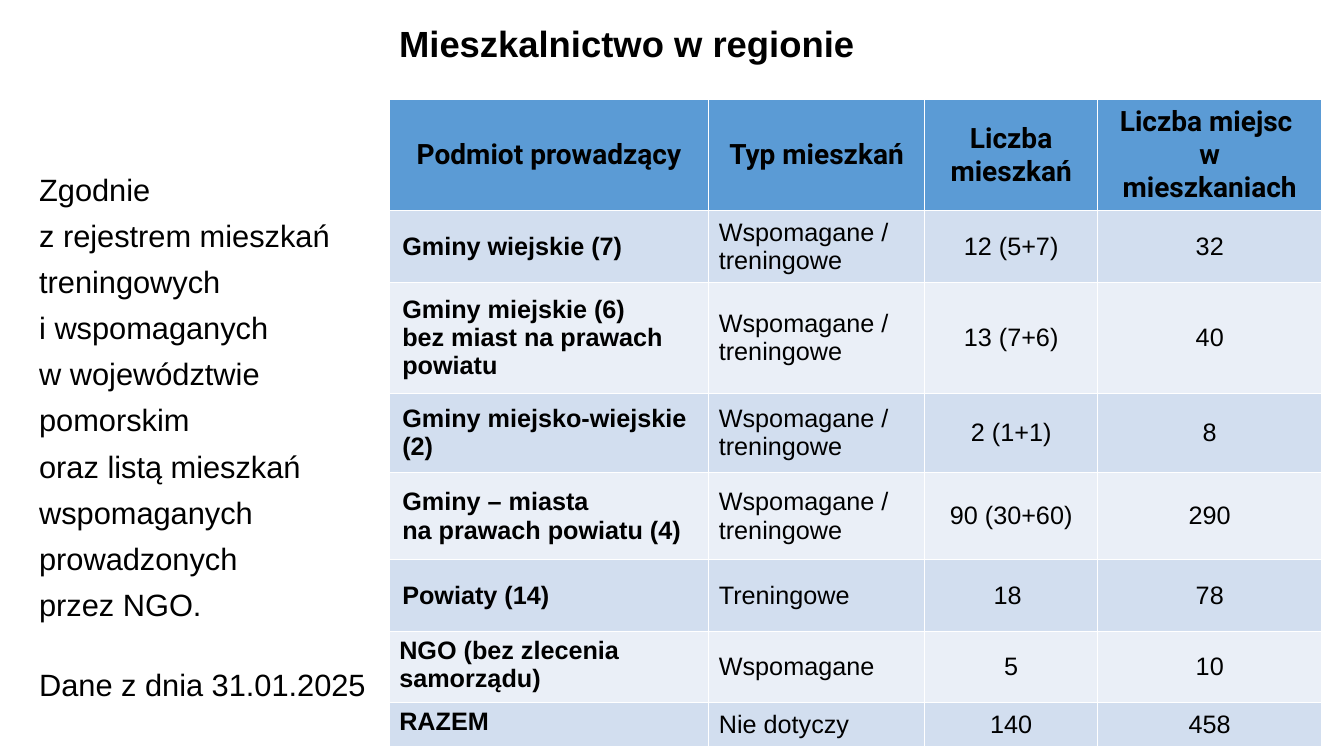
"""Build the slide on supported housing in the region."""
from dataclasses import dataclass

from pptx import Presentation
from pptx import util as u
from pptx.dml.color import RGBColor
from pptx.enum import text

WIDTH, HEIGHT = u.Inches(13.33), u.Inches(7.5)


@dataclass(frozen=True)
class Theme:
    """Colours, fonts and type sizes of the slide."""
    ink: str = "000000"
    header: str = "5B9BD5"
    bands: tuple = ("D2DEEF", "EAEFF7")
    font: str = "Arial"
    header_font: str = "Roboto"
    title_size: int = 26
    body_size: int = 22
    header_size: int = 20
    cell_size: int = 18


THEME = Theme()
COLUMN_SHARES = (23.78, 16.05, 12.9, 16.65)
ROW_SHARES = (12.53, 9.47, 14.67, 10.53, 11.47, 9.47, 9.47, 5.87)
PADDED_ROWS = 6
INTRO = ("Zgodnie \vz rejestrem mieszkań treningowych \vi wspomaganych "
         "\vw województwie pomorskim \voraz listą mieszkań wspomaganych "
         "prowadzonych \vprzez NGO.\nDane z dnia 31.01.2025")
BOTH = "Wspomagane / treningowe"
HOUSING = (
    ("Podmiot prowadzący", "Typ mieszkań", "Liczba mieszkań",
     "Liczba miejsc \vw mieszkaniach"),
    ("Gminy wiejskie (7)", BOTH, "12 (5+7)", "32"),
    ("Gminy miejskie (6)\nbez miast na prawach powiatu", BOTH, "13 (7+6)", "40"),
    ("Gminy miejsko-wiejskie (2)", BOTH, "2 (1+1)", "8"),
    ("Gminy – miasta \vna prawach powiatu (4)", BOTH, "90 (30+60)", "290"),
    ("Powiaty (14)", "Treningowe", "18 ", "78"),
    ("NGO (bez zlecenia samorządu)", "Wspomagane", "5", "10"),
    ("RAZEM", "Nie dotyczy", "140", "458"),
)


def across(share):
    """Return a percentage of the slide's width."""
    return round(WIDTH * share / 100)


def down(share):
    """Return a percentage of the slide's height."""
    return round(HEIGHT * share / 100)


def write(frame, wording, size, font=THEME.font, bold=False, align=None):
    """Fill a text frame and format all its runs alike."""
    frame.text = wording
    for para in frame.paragraphs:
        para.alignment = align
        for span in para.runs:
            span.font.name = font
            span.font.size = u.Pt(size)
            span.font.bold = bold
            span.font.color.rgb = RGBColor.from_string(THEME.ink)


def add_text(page, left, top, width, height, wording, size, spacing,
             bold=False, anchor=text.MSO_ANCHOR.TOP):
    """Add a wrapping text box placed by shares of the slide."""
    box = page.shapes.add_textbox(across(left), down(top), across(width), down(height))
    frame = box.text_frame
    frame.word_wrap = True
    frame.vertical_anchor = anchor
    write(frame, wording, size, bold=bold)
    for para in frame.paragraphs:
        para.line_spacing = spacing
    return frame


def style_cell(cell, wording, row, column):
    """Write one cell in the manner of its row and column."""
    is_header, is_name = row == 0, column == 0
    centred = is_header or column > 1
    write(cell.text_frame, wording,
          THEME.header_size if is_header else THEME.cell_size,
          THEME.header_font if is_header else THEME.font,
          bold=is_header or is_name,
          align=text.PP_ALIGN.CENTER if centred else text.PP_ALIGN.LEFT)
    padded = row < PADDED_ROWS
    if is_header or (is_name and padded):
        cell.margin_left = cell.margin_right = u.Inches(0.13)
    cell.vertical_anchor = (text.MSO_ANCHOR.MIDDLE if padded or not is_name
                            else text.MSO_ANCHOR.TOP)
    cell.fill.solid()
    colour = THEME.header if is_header else THEME.bands[(row - 1) % 2]
    cell.fill.fore_color.rgb = RGBColor.from_string(colour)


def add_housing_table(page, left, top):
    """Add the table of housing by running body."""
    table = page.shapes.add_table(
        len(HOUSING), len(COLUMN_SHARES), across(left), down(top),
        across(sum(COLUMN_SHARES)), down(sum(ROW_SHARES))).table
    for column, share in zip(table.columns, COLUMN_SHARES):
        column.width = across(share)
    for row, share in zip(table.rows, ROW_SHARES):
        row.height = down(share)
    for row, entries in enumerate(HOUSING):
        for column, wording in enumerate(entries):
            style_cell(table.cell(row, column), wording, row, column)


def main():
    """Build and save the deck."""
    deck = Presentation()
    deck.slide_width, deck.slide_height = WIDTH, HEIGHT
    page = deck.slides.add_slide(deck.slide_layouts[6])
    add_text(page, 28.96, 0.13, 53.11, 9.07, "Mieszkalnictwo w regionie",
             THEME.title_size, 1.3, bold=True, anchor=text.MSO_ANCHOR.BOTTOM)
    intro = add_text(page, 2.18, 20.67, 26.63, 72.4, INTRO, THEME.body_size, 1.25)
    for para in intro.paragraphs:
        para.space_after = u.Pt(6)
    intro.paragraphs[-1].space_before = u.Pt(18)
    add_housing_table(page, 28.96, 13.2)
    deck.save("out.pptx")


if __name__ == "__main__":
    main()
